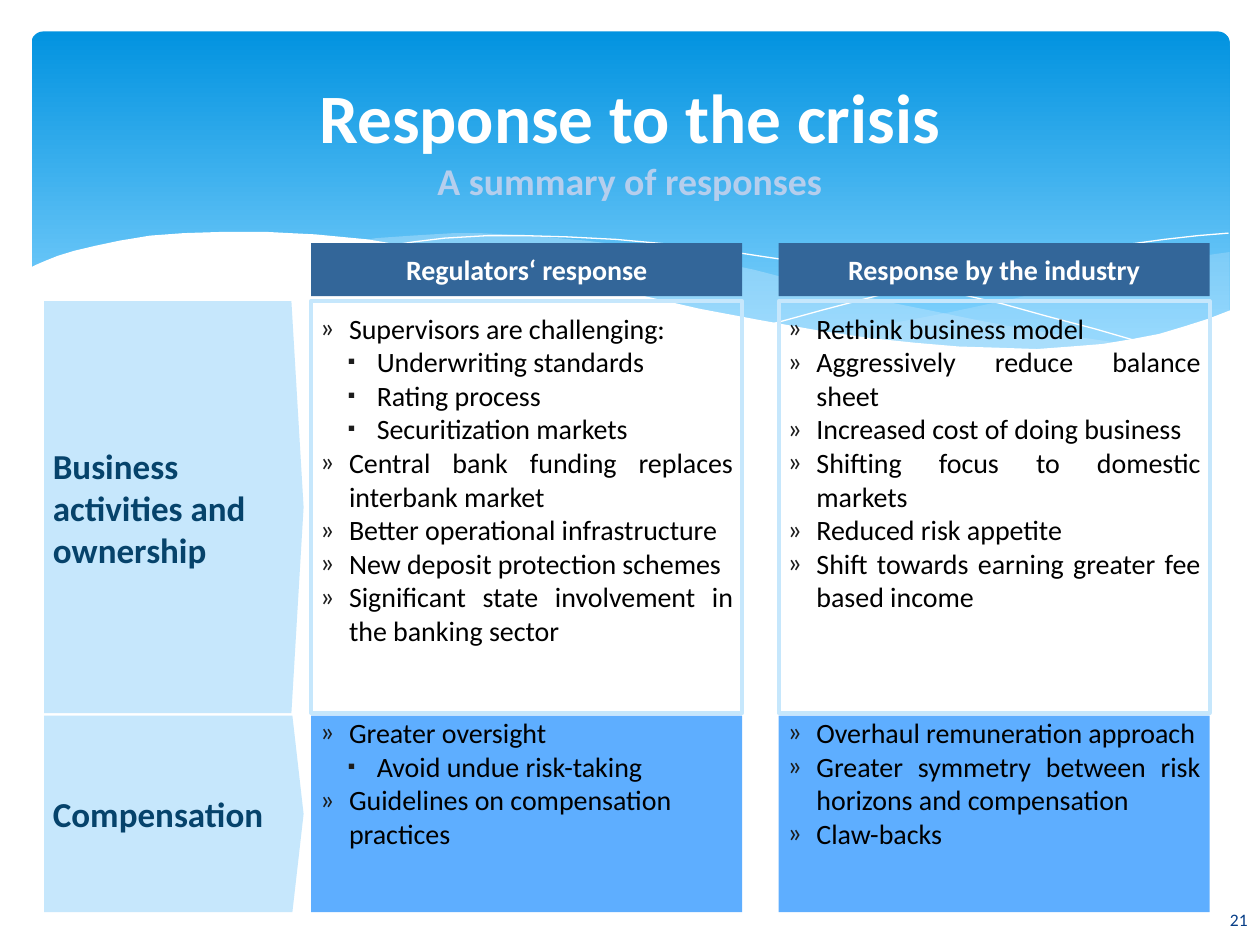
from lxml import etree
from pptx import Presentation
from pptx import util as u
from pptx.dml import color
from pptx.enum import shapes, text
from pptx.oxml import ns

Inches, Pt = u.Inches, u.Pt
COLORS = {
    "white": "FFFFFF", "black": "000000", "sky": "0293E0", "pale_sky": "83D3FE",
    "mist": "C6E7FC", "subtitle": "B5CEED", "label": "06436B", "header": "336699",
    "blue": "5EAEFF", "bullet": "1C1C1C", "number": "073E87",
}
FONT = "Calibri"
LEFT, MIDDLE = text.PP_ALIGN.LEFT, text.MSO_ANCHOR.MIDDLE
CENTER, JUSTIFY = text.PP_ALIGN.CENTER, text.PP_ALIGN.JUSTIFY

# Grid of the matrix
LABEL_X, LABEL_W = 0.35, 2.06
COLUMN_X, COLUMN_W = (2.47, 6.18), 3.42
HEADER_Y, HEADER_H = 1.93, 0.42
HEADERS = ["Regulators‘ response", "Response by the industry"]

# Each row: label, top, height, point depth, boxed in outline, cells of (level, text, alignment)
ROWS = [
    ("Business activities and ownership", 2.39, 3.27, 0.047, True, [
        [(0, "Supervisors are challenging:", JUSTIFY),
         (1, "Underwriting standards", JUSTIFY),
         (1, "Rating process", JUSTIFY),
         (1, "Securitization markets", JUSTIFY),
         (0, "Central bank funding replaces interbank market", JUSTIFY),
         (0, "Better operational infrastructure", JUSTIFY),
         (0, "New deposit protection schemes", JUSTIFY),
         (0, "Significant state involvement in the banking sector", JUSTIFY)],
        [(0, "Rethink business model", JUSTIFY),
         (0, "Aggressively reduce balance sheet", JUSTIFY),
         (0, "Increased cost of doing business", JUSTIFY),
         (0, "Shifting focus to domestic markets", JUSTIFY),
         (0, "Reduced risk appetite", JUSTIFY),
         (0, "Shift towards earning greater fee based income", JUSTIFY)],
    ]),
    ("Compensation", 5.68, 1.56, 0.057, False, [
        [(0, "Greater oversight", JUSTIFY),
         (1, "Avoid undue risk-taking", JUSTIFY),
         (0, "Guidelines on compensation practices", LEFT)],
        [(0, "Overhaul remuneration approach", JUSTIFY),
         (0, "Greater symmetry between risk horizons and compensation", JUSTIFY),
         (0, "Claw-backs", JUSTIFY)],
    ]),
]

# Outlines of the banner waves, in inches
RIGHT_WAVE = [
    (9.76, 2), (9.48, 2.04), (9.21, 2.1), (8.91, 2.16), (8.61, 2.23), (8.05, 2.37),
    (7.53, 2.48), (7.06, 2.57), (6.61, 2.65), (6.91, 2.69), (7.19, 2.72), (7.45, 2.75),
    (7.69, 2.77), (8.03, 2.78), (8.35, 2.77), (8.63, 2.75), (8.89, 2.72), (9.13, 2.67),
    (9.35, 2.62), (9.49, 2.57), (9.63, 2.52), (9.76, 2.47)]
LONG_WAVE = [
    (8.93, 2.73), (8.66, 2.69), (8.37, 2.65), (8.07, 2.6), (7.75, 2.54), (7.41, 2.47),
    (7.06, 2.4), (6.68, 2.31), (6.29, 2.22), (5.98, 2.14), (5.69, 2.08), (5.41, 2.03),
    (5.14, 1.98), (4.89, 1.94), (4.65, 1.91), (4.42, 1.89), (4.2, 1.87), (3.99, 1.86),
    (3.8, 1.85), (3.61, 1.85), (3.28, 1.87), (2.99, 1.89), (2.86, 1.91), (3.23, 1.96),
    (3.62, 2.03), (4.04, 2.11), (4.49, 2.22), (4.91, 2.32), (5.3, 2.4), (5.66, 2.48),
    (6.01, 2.55), (6.34, 2.61), (6.65, 2.66), (6.95, 2.7), (7.22, 2.74), (7.48, 2.76),
    (7.73, 2.77), (7.96, 2.78), (8.28, 2.78), (8.57, 2.77), (8.76, 2.75)]
FALLING_LINE = [
    (3.09, 1.95), (3.28, 1.92), (3.53, 1.89), (3.87, 1.87), (4.16, 1.87), (4.5, 1.88),
    (4.89, 1.9), (5.33, 1.94), (5.82, 2), (6.08, 2.04), (6.36, 2.08), (6.65, 2.13),
    (6.95, 2.19), (7.27, 2.26), (7.6, 2.33), (7.95, 2.41), (8.31, 2.51), (8.69, 2.61),
    (9.07, 2.72)]
RISING_LINE = [
    (6.13, 2.57), (6.53, 2.46), (6.95, 2.35), (7.48, 2.23), (8.06, 2.1), (8.66, 1.99),
    (8.95, 1.94), (9.24, 1.9), (9.51, 1.87), (9.75, 1.85)]
WHITE_WAVE = [
    (9.77, 2.46), (9.59, 2.53), (9.4, 2.59), (9.2, 2.65), (8.99, 2.69), (8.75, 2.73),
    (8.5, 2.75), (8.23, 2.77), (7.93, 2.76), (7.61, 2.75), (7.26, 2.72), (6.88, 2.68),
    (6.48, 2.62), (6.03, 2.54), (5.55, 2.45), (5.03, 2.33), (4.47, 2.2), (4.18, 2.13),
    (3.91, 2.07), (3.65, 2.02), (3.4, 1.97), (3.16, 1.94), (2.92, 1.9), (2.71, 1.88),
    (2.5, 1.86), (2.3, 1.85), (2.11, 1.84), (1.77, 1.84), (1.46, 1.85), (1.19, 1.87),
    (0.95, 1.91), (0.76, 1.95), (0.59, 1.99), (0.46, 2.03), (0.36, 2.07), (0.29, 2.1),
    (0.23, 2.13), (0.23, 3.29), (9.77, 3.29)]


def rgb(name):
    return color.RGBColor.from_string(COLORS[name])


def paint(shape, fill=None, line=None, width=0):
    shape.shadow.inherit = False
    if fill:
        shape.fill.solid()
        shape.fill.fore_color.rgb = rgb(fill)
    else:
        shape.fill.background()
    if line:
        shape.line.color.rgb = rgb(line)
        shape.line.width = Pt(width)
    else:
        shape.line.fill.background()


def add_block(page, kind, x, y, w, h, **look):
    box = page.shapes.add_shape(kind, Inches(x), Inches(y), Inches(w), Inches(h))
    paint(box, **look)
    return box


def add_wave(page, points, closed=True, opacity=None, **look):
    scaled = [(Inches(x), Inches(y)) for x, y in points]
    builder = page.shapes.build_freeform(*scaled[0])
    builder.add_line_segments(scaled[1:], close=closed)
    wave = builder.convert_to_shape()
    paint(wave, **look)
    if opacity:
        solid = wave.fill.fore_color._xFill
        etree.SubElement(solid[0], ns.qn("a:alpha"), val=str(opacity * 1000))


def set_frame(box, anchor, side=0.1, top=0.05, bottom=0.05):
    frame = box.text_frame
    frame.word_wrap = True
    frame.vertical_anchor = anchor
    frame.margin_left = frame.margin_right = Inches(side)
    frame.margin_top, frame.margin_bottom = Inches(top), Inches(bottom)
    return frame


def style(span, size, ink, bold=False):
    span.font.name, span.font.size, span.font.bold = FONT, Pt(size), bold
    span.font.color.rgb = rgb(ink)


def write(frame, words, size, ink, align=LEFT, bold=False):
    frame.text = words
    para = frame.paragraphs[0]
    para.alignment = align
    style(para.runs[0], size, ink, bold)


def set_bullet(para, level):
    para.level = level
    props = para._p.get_or_add_pPr()
    props.set("marL", str(Inches((0.23, 0.45)[level])))
    props.set("indent", str(-Inches(0.23)))
    tint = etree.SubElement(props, ns.qn("a:buClr"))
    etree.SubElement(tint, ns.qn("a:srgbClr"), val=COLORS["bullet"])
    if level:
        etree.SubElement(props, ns.qn("a:buSzPct"), val="75000")
    etree.SubElement(props, ns.qn("a:buFont"), typeface=FONT)
    etree.SubElement(props, ns.qn("a:buChar"), char="»▪"[level])


def write_list(frame, items):
    frame.text = "\n".join(words for _, words, _ in items)
    for para, (level, _, align) in zip(frame.paragraphs, items):
        para.alignment = align
        set_bullet(para, level)
        style(para.runs[0], 16, "black")


def add_banner(page):
    banner = add_block(page, shapes.MSO_SHAPE.ROUNDED_RECTANGLE, 0.25, 0.25, 9.51, 2.7)
    banner.adjustments[0] = 0.034
    banner.fill.gradient()
    banner.fill.gradient_angle = 270
    for stop, place, name in zip(banner.fill.gradient_stops, (0, 0.9), ("sky", "pale_sky")):
        stop.position = place
        stop.color.rgb = rgb(name)
    add_wave(page, RIGHT_WAVE, fill="mist", opacity=29)
    add_wave(page, LONG_WAVE, fill="mist", opacity=40)
    add_wave(page, FALLING_LINE, closed=False, line="white")
    add_wave(page, RISING_LINE, closed=False, line="white")
    add_wave(page, WHITE_WAVE, fill="white")


def add_title(page):
    box = page.shapes.add_textbox(Inches(0.5), Inches(0.25), Inches(9), Inches(1.37))
    frame = set_frame(box, text.MSO_ANCHOR.TOP, top=0.34)
    para = frame.paragraphs[0]
    para.text = "Response to the crisis\vA summary of responses"
    para.alignment = CENTER
    style(para.runs[0], 39.6, "white", True)
    style(para.runs[1], 21.6, "subtitle", True)


def add_row(page, label, y, h, depth, outlined, cells):
    arrow = add_block(page, shapes.MSO_SHAPE.PENTAGON, LABEL_X, y, LABEL_W, h, fill="mist")
    arrow.adjustments[0] = depth
    write(set_frame(arrow, MIDDLE, 0.07, 0.07, 0.07), label, 20, "label", bold=True)
    look = {"line": "mist", "width": 2.25} if outlined else {"fill": "blue"}
    inset = 0.08 if outlined else 0
    for x, items in zip(COLUMN_X, cells):
        cell = add_block(page, shapes.MSO_SHAPE.RECTANGLE, x, y, COLUMN_W, h, **look)
        write_list(set_frame(cell, text.MSO_ANCHOR.TOP, 0.07, inset, inset), items)


def main():
    deck = Presentation()
    deck.slide_width, deck.slide_height = Inches(10), Inches(7.5)
    page = deck.slides.add_slide(deck.slide_layouts[6])
    add_banner(page)
    add_title(page)
    # Matrix of responses
    for row in ROWS:
        add_row(page, *row)
    for x, words in zip(COLUMN_X, HEADERS):
        head = add_block(page, shapes.MSO_SHAPE.RECTANGLE, x, HEADER_Y, COLUMN_W, HEADER_H,
                         fill="header")
        write(set_frame(head, MIDDLE, 0.07, 0, 0), words, 16, "white", CENTER, True)
    # Page number
    number = page.shapes.add_textbox(Inches(8.73), Inches(7.1), Inches(1.27), Inches(0.4))
    write(set_frame(number, MIDDLE), "21", 10, "number", text.PP_ALIGN.RIGHT)
    deck.save("out.pptx")


if __name__ == "__main__":
    main()
